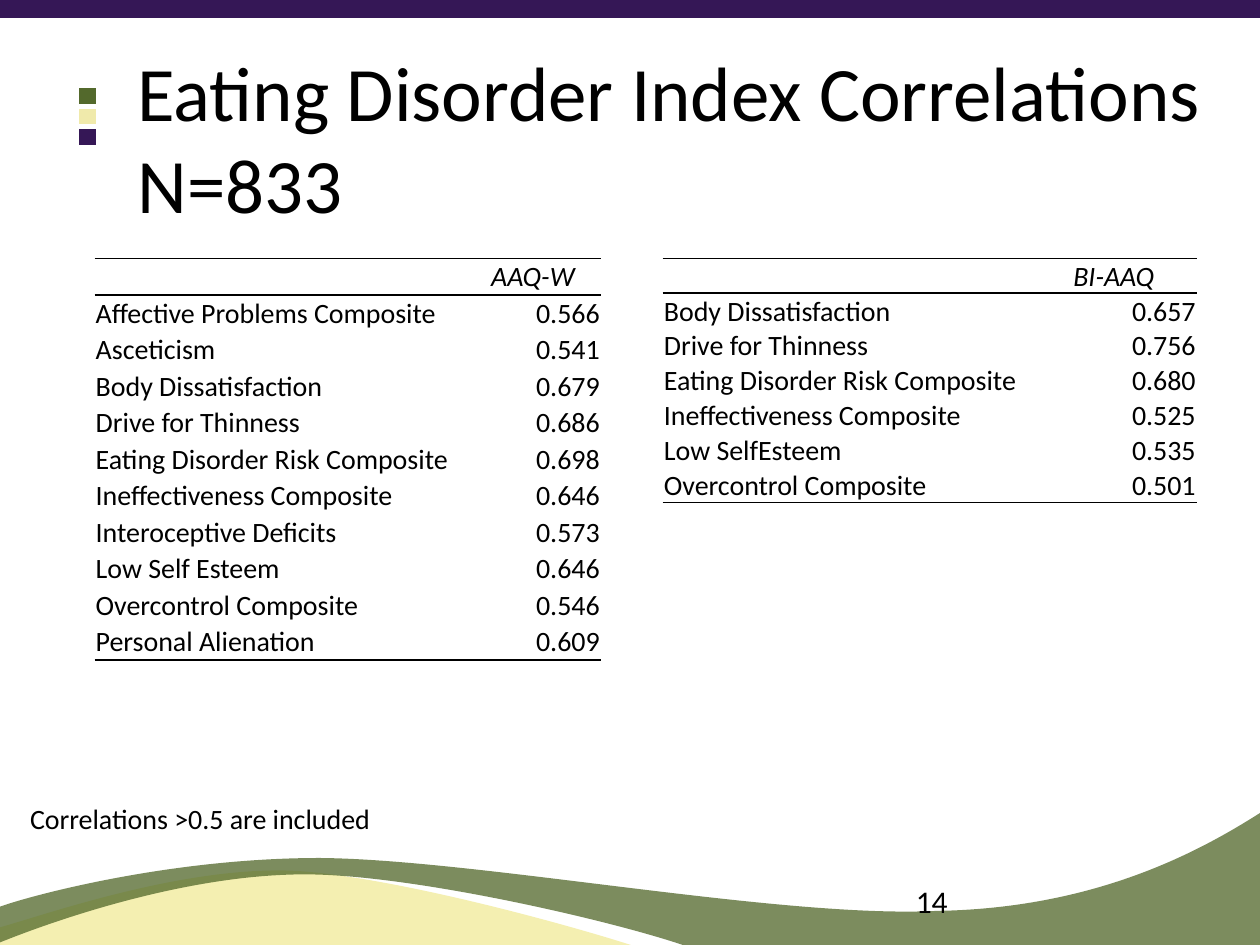
from lxml import etree
from pptx import Presentation
from pptx.dml.color import RGBColor
from pptx.enum import shapes, text
from pptx.oxml import ns
from pptx.util import Inches, Pt

BLACK = RGBColor(0x00, 0x00, 0x00)
PURPLE = RGBColor(0x35, 0x17, 0x56)
GREEN = RGBColor(0x53, 0x69, 0x2C)
CREAM = RGBColor(0xF0, 0xEA, 0xAB)
PALE_YELLOW = RGBColor(0xF4, 0xEF, 0xB1)

FONT = "Calibri"
NO_TABLE_STYLE = "{2D5ABB26-0587-4C30-8999-92F81FD0307C}"

AAQ_W = [
    ("Affective Problems Composite", "0.566"),
    ("Asceticism", "0.541"),
    ("Body Dissatisfaction", "0.679"),
    ("Drive for Thinness", "0.686"),
    ("Eating Disorder Risk Composite", "0.698"),
    ("Ineffectiveness Composite", "0.646"),
    ("Interoceptive Deficits", "0.573"),
    ("Low Self Esteem", "0.646"),
    ("Overcontrol Composite", "0.546"),
    ("Personal Alienation", "0.609"),
]
BI_AAQ = [
    ("Body Dissatisfaction", "0.657"),
    ("Drive for Thinness", "0.756"),
    ("Eating Disorder Risk Composite", "0.680"),
    ("Ineffectiveness Composite", "0.525"),
    ("Low SelfEsteem", "0.535"),
    ("Overcontrol Composite", "0.501"),
]


def write(tf, content, size=16, italic=False, align=text.PP_ALIGN.LEFT):
    p = tf.paragraphs[0]
    p.alignment = align
    if not content:
        etree.SubElement(p._p, ns.qn("a:endParaRPr"), sz=str(size * 100))
        return
    for i, line in enumerate(content.split("\n")):
        if i:
            p.add_line_break()
        r = p.add_run()
        r.text = line
        r.font.name, r.font.size = FONT, Pt(size)
        r.font.italic = italic
        r.font.color.rgb = BLACK


def add_note(s, box, content, size=16):
    sp = s.shapes.add_textbox(*map(Inches, box))
    sp.text_frame.word_wrap = True
    write(sp.text_frame, content, size)


def add_rule(s, left, right, y, color, width):
    """Draw a horizontal line with square ends."""
    line = s.shapes.add_connector(shapes.MSO_CONNECTOR.STRAIGHT, Inches(left),
                                  Inches(y), Inches(right), Inches(y))
    line.line.color.rgb = color
    line.line.width = Pt(width)
    line.line._get_or_add_ln().set("cap", "sq")
    etree.SubElement(line._element.spPr, ns.qn("a:effectLst"))


def bend(sp, segments):
    """Turn each run of three line points into one Bezier curve."""
    lines = iter(sp._element.spPr.findall(".//" + ns.qn("a:lnTo")))
    for seg in segments:
        parts = [next(lines) for _ in seg]
        if len(seg) == 3:
            curve = etree.Element(ns.qn("a:cubicBezTo"))
            parts[0].addprevious(curve)
            for part in parts:
                curve.append(part[0])
                part.getparent().remove(part)


def add_wave(s, start, segments, color, alpha=None):
    """Fill an outline whose segments hold one point (line) or three (curve)."""
    mils = [(round(x * 1000), round(y * 1000)) for seg in segments for x, y in seg]
    builder = s.shapes.build_freeform(round(start[0] * 1000), round(start[1] * 1000),
                                      scale=Inches(1) / 1000)
    builder.add_line_segments(mils, close=True)
    sp = builder.convert_to_shape()
    bend(sp, segments)
    sp.shadow.inherit = False
    sp.line.fill.background()
    sp.fill.solid()
    sp.fill.fore_color.rgb = color
    if alpha is not None:
        clr = sp._element.spPr.find(".//" + ns.qn("a:srgbClr"))
        etree.SubElement(clr, ns.qn("a:alpha"), val=str(alpha * 1000))


def add_backdrop(s):
    add_wave(s, (5.21, 7.57), [
        [(4.91, 7.45), (3.18, 6.95), (2.31, 6.91)],
        [(1.44, 6.88), (0.39, 7.25), (0, 7.36)],
        [(0, 7.57)],
    ], PALE_YELLOW)
    add_rule(s, 0.05, 9.95, 0.07, PURPLE, 10.5)
    for i, color in enumerate((GREEN, CREAM, PURPLE)):
        y = 0.76 + i * 0.165
        add_rule(s, 0.69, 0.7, y, color, 9)
    add_wave(s, (10.01, 7.57), [
        [(5.6, 7.57)],
        [(5.25, 7.4), (3.37, 6.94), (2.42, 6.94)],
        [(1.47, 6.94), (0.42, 7.31), (0, 7.48)],
        [(-0.01, 7.2)],
        [(0.17, 7.13), (1.3, 6.81), (2.54, 6.81)],
        [(3.79, 6.82), (6.19, 7.29), (7.43, 7.23)],
        [(8.72, 7.21), (9.55, 6.74), (10.02, 6.44)],
    ], GREEN, alpha=76)


def add_title(s, box, content):
    sp = s.shapes.title
    sp.left, sp.top, sp.width, sp.height = map(Inches, box)
    tf = sp.text_frame
    tf.word_wrap = True
    tf.auto_size = text.MSO_AUTO_SIZE.NONE
    tf.vertical_anchor = text.MSO_ANCHOR.TOP
    tf.margin_left, tf.margin_top = Inches(0.1), Inches(0.05)
    write(tf, content, 44)


def set_borders(cell, top, bottom):
    """Rule the top and bottom edges in black; widths in points, 0 for no rule."""
    tcPr = cell._tc.get_or_add_tcPr()
    edges = (("a:lnL", 0), ("a:lnR", 0), ("a:lnT", top), ("a:lnB", bottom))
    for i, (tag, width) in enumerate(edges):
        ln = etree.Element(ns.qn(tag))
        if width:
            ln.set("w", str(Pt(width)))
            fill = etree.SubElement(ln, ns.qn("a:solidFill"))
            etree.SubElement(fill, ns.qn("a:srgbClr"), val=str(BLACK))
        else:
            etree.SubElement(ln, ns.qn("a:noFill"))
        tcPr.insert(i, ln)


def add_correlations(s, box, col_widths, row_height, heading, records, last_rule=1):
    rows = [("", heading), *records]
    frame = s.shapes.add_table(len(rows), 2, *map(Inches, box))
    table = frame.table
    table.first_row = table.horz_banding = False
    table._tbl.tblPr.find(ns.qn("a:tableStyleId")).text = NO_TABLE_STYLE
    for col, width in zip(table.columns, col_widths):
        col.width = Inches(width)
    for i, values in enumerate(rows):
        table.rows[i].height = Inches(row_height)
        for j, value in enumerate(values):
            cell = table.cell(i, j)
            cell.fill.background()
            cell.vertical_anchor = text.MSO_ANCHOR.MIDDLE
            cell.margin_left = cell.margin_right = cell.margin_top = Inches(0.01)
            cell.margin_bottom = 0
            if i == 0:
                align = text.PP_ALIGN.CENTER
            else:
                align = text.PP_ALIGN.RIGHT if j else text.PP_ALIGN.LEFT
            write(cell.text_frame, value, italic=i == 0, align=align)
            bottom = 1 if i == 0 else last_rule if i == len(rows) - 1 else 0
            set_borders(cell, 1 if i < 2 else 0, bottom)
    frame.height = Inches(box[3])


def main():
    prs = Presentation()
    prs.slide_width, prs.slide_height = Inches(10), Inches(7.5)
    s = prs.slides.add_slide(prs.slide_layouts[5])
    add_backdrop(s)
    add_title(s, (0.99, 0.3, 8.89, 1.25), "Eating Disorder Index Correlations\nN=833")
    add_correlations(s, (0.75, 2.05, 4.02, 3.17), (2.94, 1.08), 0.29, "AAQ-W", AAQ_W)
    add_note(s, (7.17, 6.95, 2.33, 0.4), "14", 18)
    add_correlations(s, (5.26, 2.05, 4.24, 1.94), (2.92, 1.32), 0.21, "BI-AAQ", BI_AAQ,
                     last_rule=0.5)
    add_note(s, (0.14, 6.31, 4.05, 0.37), "Correlations >0.5 are included")
    prs.save("out.pptx")


if __name__ == "__main__":
    main()
